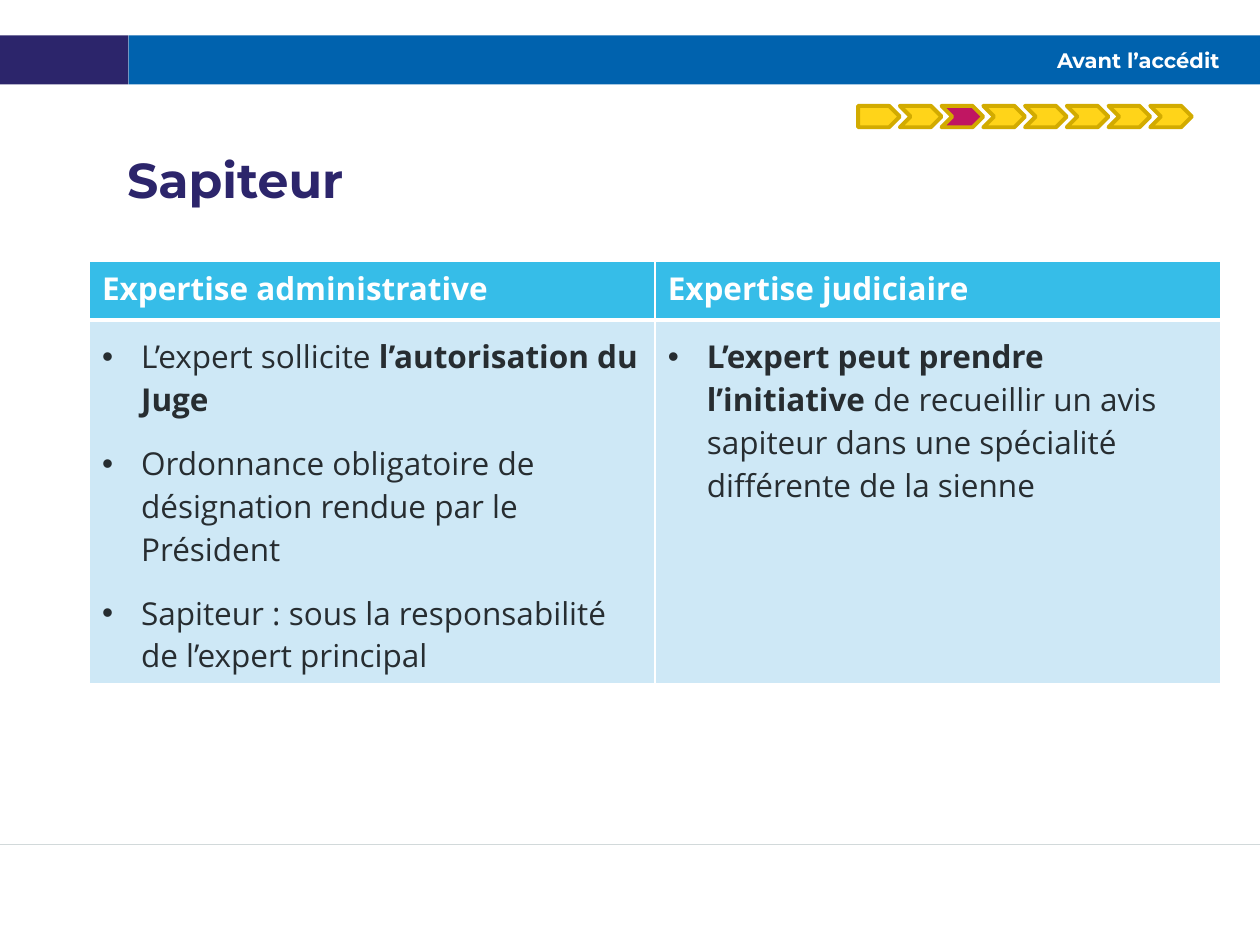
from lxml.etree import SubElement
from pptx import Presentation
from pptx.dml.color import RGBColor
from pptx.enum.shapes import MSO_CONNECTOR, MSO_SHAPE
from pptx.enum.text import MSO_ANCHOR, PP_ALIGN
from pptx.oxml.ns import qn
from pptx.util import Inches, Pt

WHITE = RGBColor(0xFF, 0xFF, 0xFF)
INDIGO = RGBColor(0x2C, 0x25, 0x6B)
BLUE = RGBColor(0x00, 0x62, 0xAE)
SKY = RGBColor(0x36, 0xBD, 0xE8)
PALE = RGBColor(0xCE, 0xE8, 0xF6)
INK = RGBColor(0x27, 0x2D, 0x31)
GREY = RGBColor(0xD2, 0xD9, 0xDA)
YELLOW = RGBColor(0xFF, 0xD4, 0x19)
GOLD = RGBColor(0xD2, 0xAB, 0x00)
MAGENTA = RGBColor(0xC0, 0x16, 0x62)

SECTION = "Avant l’accédit"
HEADING = "Sapiteur"
COLUMNS = [
    ("Expertise administrative", [
        [("L’expert sollicite ", False), ("l’autorisation du Juge", True)],
        [("Ordonnance obligatoire de désignation rendue par le Président", False)],
        [("Sapiteur : sous la responsabilité de l’expert principal", False)],
    ]),
    ("Expertise judiciaire", [
        [("L’expert peut prendre l’initiative ", True),
         ("de recueillir un avis sapiteur dans une spécialité différente de la sienne", False)],
    ]),
]
STEPS, CURRENT_STEP = 8, 2

W, H = 10, 7.5
LEFT, CONTENT_W = 0.71, 8.98
BAR_TOP, BAR_H, BAR_SPLIT = 0.28, 0.39, 1.02
TABLE_TOP, ROWS = 2.07, (0.47, 2.47)
STEP_LEFT, STEP_TOP, STEP_W, STEP_H = 6.81, 0.84, 2.65 / STEPS, 0.17
INDENT = 0.31


def add_run(p, text, size=18, font="Open Sans", color=INK, bold=False):
    r = p.add_run()
    r.text = text
    r.font.size, r.font.name, r.font.bold = Pt(size), font, bold
    r.font.color.rgb = color


def add_block(s, kind, x, y, w, h, fill, line=None):
    sp = s.shapes.add_shape(kind, Inches(x), Inches(y), Inches(w), Inches(h))
    sp.shadow.inherit = False
    sp.fill.solid()
    sp.fill.fore_color.rgb = fill
    if line is None:
        sp.line.fill.background()
    else:
        sp.line.color.rgb = line
        sp.line.width = Pt(2.25)


def clear_margins(tf):
    tf.margin_left = tf.margin_top = tf.margin_right = tf.margin_bottom = 0
    tf.word_wrap = True


def add_bullet(p):
    pPr = p._p.get_or_add_pPr()
    pPr.set("marL", str(Inches(INDENT)))
    pPr.set("indent", str(-Inches(INDENT)))
    SubElement(pPr, qn("a:buFont"), typeface="Arial")
    SubElement(pPr, qn("a:buChar"), char="•")


def style_cell(cell, fill, **widths):
    tcPr = cell._tc.get_or_add_tcPr()
    for side in "LRTB":
        ln = SubElement(tcPr, qn(f"a:ln{side}"), w=str(Pt(widths.get(side, 1))))
        SubElement(SubElement(ln, qn("a:solidFill")), qn("a:srgbClr"), val=str(WHITE))
    cell.fill.solid()
    cell.fill.fore_color.rgb = fill


def add_comparison(s):
    table = s.shapes.add_table(2, len(COLUMNS), Inches(LEFT), Inches(TABLE_TOP),
                               Inches(CONTENT_W), Inches(sum(ROWS))).table
    for row, height in zip(table.rows, ROWS):
        row.height = Inches(height)
    for c, (header, items) in enumerate(COLUMNS):
        table.columns[c].width = Inches(CONTENT_W / len(COLUMNS))
        head, body = table.cell(0, c), table.cell(1, c)
        style_cell(head, SKY, B=3)
        style_cell(body, PALE, T=3)
        add_run(head.text_frame.paragraphs[0], header, color=WHITE, bold=True)
        body.margin_top = Inches(0.12)
        tf = body.text_frame
        for i, runs in enumerate(items):
            p = tf.add_paragraph() if i else tf.paragraphs[0]
            add_bullet(p)
            if i:
                p.space_before = Pt(6)
            if len(items) > 1:
                p.space_after = Pt(6)
            for text, bold in runs:
                add_run(p, text, bold=bold)


def main():
    prs = Presentation()
    prs.slide_width, prs.slide_height = Inches(W), Inches(H)
    s = prs.slides.add_slide(prs.slide_layouts[5])

    add_block(s, MSO_SHAPE.RECTANGLE, 0, BAR_TOP, BAR_SPLIT, BAR_H, INDIGO)
    add_block(s, MSO_SHAPE.RECTANGLE, BAR_SPLIT, BAR_TOP, W - BAR_SPLIT, BAR_H, BLUE)
    rule = s.shapes.add_connector(MSO_CONNECTOR.STRAIGHT, 0, Inches(6.7), Inches(W), Inches(6.7))
    rule.line.color.rgb = GREY
    rule.line.width = Pt(0.75)
    SubElement(rule._element.spPr, qn("a:effectLst"))

    title = s.shapes.title
    title.left, title.top = Inches(1.1), Inches(BAR_TOP)
    title.width, title.height = Inches(8.58), Inches(BAR_H)
    tf = title.text_frame
    clear_margins(tf)
    tf.vertical_anchor = MSO_ANCHOR.MIDDLE
    p = tf.paragraphs[0]
    p.alignment = PP_ALIGN.RIGHT
    add_run(p, SECTION, size=12, font="Montserrat", color=WHITE, bold=True)
    s.shapes.element.append(title.element)

    add_comparison(s)

    tf = s.shapes.add_textbox(Inches(LEFT), Inches(1.24), Inches(CONTENT_W), Inches(0.51)).text_frame
    clear_margins(tf)
    p = tf.paragraphs[0]
    p._p.get_or_add_pPr().set("marL", str(Inches(0.3)))
    p.line_spacing = 0.9
    add_run(p, HEADING, size=28, font="Montserrat", color=INDIGO, bold=True)

    for i in range(STEPS):
        add_block(s, MSO_SHAPE.CHEVRON if i else MSO_SHAPE.PENTAGON,
                  STEP_LEFT + i * STEP_W, STEP_TOP, STEP_W, STEP_H,
                  MAGENTA if i == CURRENT_STEP else YELLOW, GOLD)

    prs.save("out.pptx")


if __name__ == "__main__":
    main()
